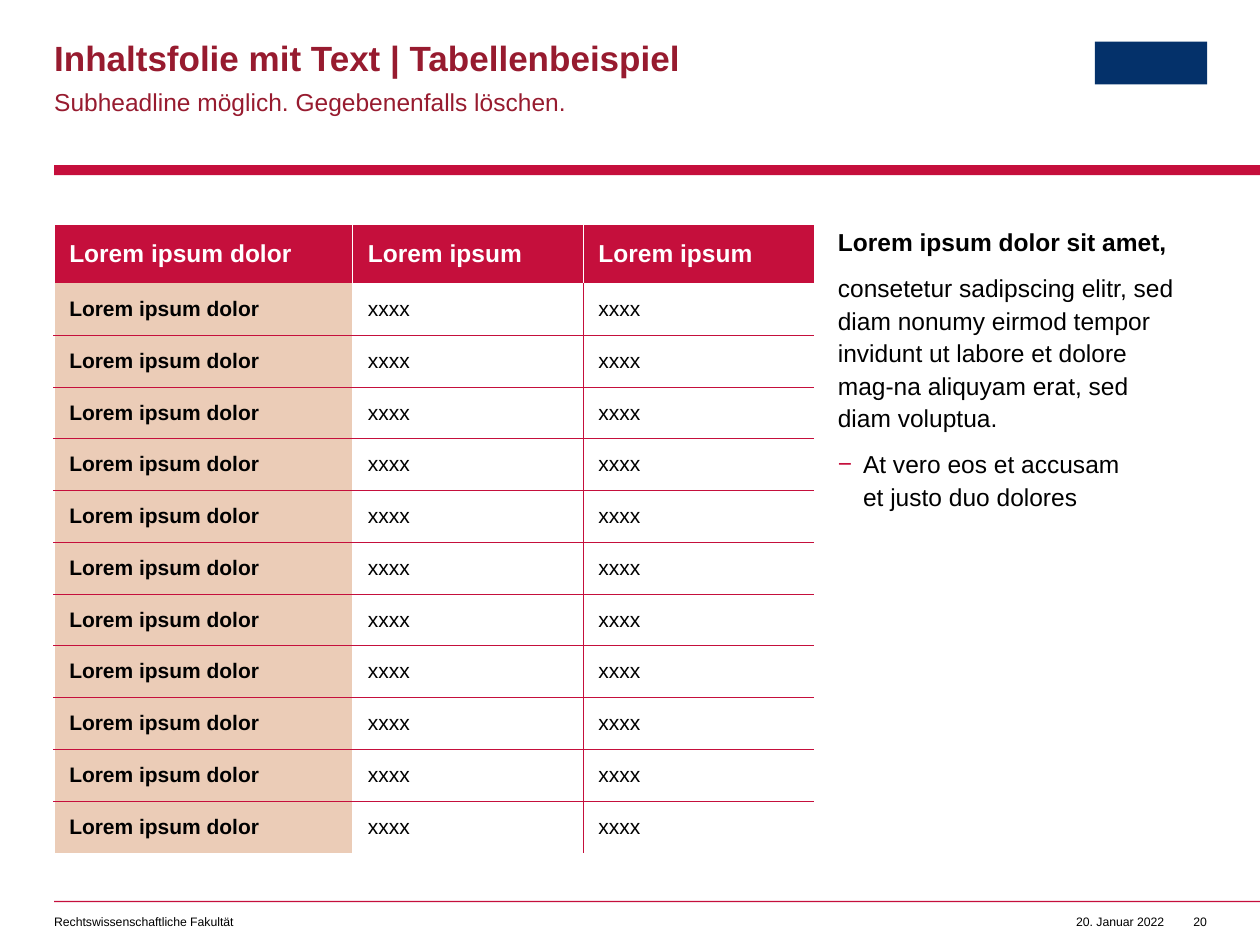
from lxml.etree import SubElement
from pptx import Presentation
from pptx.dml.color import RGBColor
from pptx.enum.shapes import MSO_SHAPE
from pptx.enum.text import MSO_ANCHOR, PP_ALIGN
from pptx.oxml.ns import qn
from pptx.util import Inches, Pt

COLORS = {
    "red": "C50F3C", "wine": "971B2F", "sand": "EBCCB7",
    "navy": "04316A", "white": "FFFFFF", "black": "000000",
}

presentation = Presentation()
presentation.slide_width, presentation.slide_height = Inches(10), Inches(7.5)
slide = presentation.slides.add_slide(presentation.slide_layouts[6])

# Grid of 100 columns by 75 rows; both steps are equal
UNIT = presentation.slide_width / 100
LEFT, RIGHT, TOP = 4.3, 95.8, 17.8


def grid(*steps):
    return [round(step * UNIT) for step in steps]


def write(paragraph, text, size, color="black", bold=False, **layout):
    paragraph.text = text
    for name, value in layout.items():
        setattr(paragraph, name, value)
    for run in paragraph.runs:
        for name, value in {"name": "Arial", "size": Pt(size), "bold": bold}.items():
            setattr(run.font, name, value)
        run.font.color.rgb = RGBColor.from_string(COLORS[color])


# Header bar, footer rule and a plain block in the logo's place
for left, top, width, height, color in [
    (LEFT, 13.1, 100 - LEFT, 0.8, "red"),
    (LEFT, 71.5, 100 - LEFT, 0.1, "red"),
    (86.9, 3.3, RIGHT - 86.9, 3.4, "navy"),
]:
    shape = slide.shapes.add_shape(MSO_SHAPE.RECTANGLE, *grid(left, top, width, height))
    shape.shadow.inherit = False
    shape.fill.solid()
    shape.fill.fore_color.rgb = RGBColor.from_string(COLORS[color])
    shape.line.fill.background()

# Text boxes: title, subheadline, footer and side text
body = {"line_spacing": 1.1, "space_after": Pt(8)}
right = {"alignment": PP_ALIGN.RIGHT}
text_boxes = [
    ((LEFT, 3.3, 56.1, 3), True, 0, [
        ("Inhaltsfolie mit Text | Tabellenbeispiel", 20, "wine", True, {"line_spacing": 0.9})]),
    ((LEFT, 6.7, 56.1, 2.4), True, 3.9, [
        ("Subheadline möglich. Gegebenenfalls löschen.", 14, "wine", False, body)]),
    ((LEFT, 72.6, 44.9, 1.2), True, 0, [
        ("Rechtswissenschaftliche Fakultät", 7, "black", False, {})]),
    ((85.3, 72.6, 7.1, 1.2), False, 0, [("20. Januar 2022", 7, "black", False, right)]),
    ((93.8, 72.6, 2, 1.2), False, 0, [("20", 7, "black", False, right)]),
    ((66.5, TOP, 29.3, 50), True, 2, [
        ("Lorem ipsum dolor sit amet,", 14, "black", True, body),
        ("consetetur sadipscing elitr, sed diam nonumy eirmod tempor invidunt ut labore "
         "et dolore mag-na aliquyam erat, sed diam voluptua.", 14, "black", False, body),
        ("At vero eos et accusam\vet justo duo dolores", 14, "black", False,
         {**body, "level": 1})]),
]
for place, wrap, inset, paragraphs in text_boxes:
    frame = slide.shapes.add_textbox(*grid(*place)).text_frame
    for name, value in {
        "margin_left": 0, "margin_top": 0, "margin_bottom": 0,
        "margin_right": grid(inset)[0], "word_wrap": wrap,
    }.items():
        setattr(frame, name, value)
    for index, (text, size, color, bold, layout) in enumerate(paragraphs):
        paragraph = frame.add_paragraph() if index else frame.paragraphs[0]
        write(paragraph, text, size, color, bold, **layout)

# Red dash in front of the last side paragraph
properties = paragraph._p.get_or_add_pPr()
indent = grid(2)[0]
properties.set("marL", str(indent))
properties.set("indent", str(-indent))
bullet_color = SubElement(properties, qn("a:buClr"))
SubElement(bullet_color, qn("a:srgbClr"), val=COLORS["red"])
SubElement(properties, qn("a:buFont"), typeface="Arial")
SubElement(properties, qn("a:buChar"), char="−")

# Table: header row, then eleven equal rows
rows = [["Lorem ipsum dolor", "Lorem ipsum", "Lorem ipsum"]]
rows += [["Lorem ipsum dolor", "xxxx", "xxxx"]] * 11
column_widths, header_height, table_height = (23.7, 18.3, 18.3), 4.7, 49.9
row_height = (table_height - header_height) / (len(rows) - 1)
table = slide.shapes.add_table(
    len(rows), len(column_widths), *grid(LEFT, TOP, sum(column_widths), table_height)).table
table.first_row = table.horz_banding = False
for column, width in zip(table.columns, column_widths):
    column.width = grid(width)[0]

thin, thick, hair = ("white", 0.5), ("white", 1), ("red", 0.25)
last_row, last_column = len(rows) - 1, len(column_widths) - 1
for row_index, texts in enumerate(rows):
    header = row_index == 0
    table.rows[row_index].height = grid(header_height if header else row_height)[0]
    # Vertical borders from the left edge to the right edge
    verticals = [thick, thin, thin, None] if header else [thick, thick, hair, None]
    for column_index, text in enumerate(texts):
        cell = table.cell(row_index, column_index)
        first = column_index == 0
        for name, value in {
            "vertical_anchor": MSO_ANCHOR.MIDDLE,
            "margin_left": Inches(0.12), "margin_right": Inches(0.12),
            "margin_top": Inches(0.04), "margin_bottom": Inches(0.04),
        }.items():
            setattr(cell, name, value)
        write(cell.text_frame.paragraphs[0], text, 14 if header else 12,
              "white" if header else "black", header or first)
        borders = {
            "L": verticals[column_index],
            "R": verticals[column_index + 1],
            "T": thick if header else hair if row_index > 1 else None,
            "B": hair if 0 < row_index < last_row else None,
        }
        cell_properties = cell._tc.get_or_add_tcPr()
        for side, border in borders.items():
            line = SubElement(cell_properties, qn(f"a:ln{side}"))
            if border:
                line.set("w", str(Pt(border[1])))
                fill = SubElement(line, qn("a:solidFill"))
                SubElement(fill, qn("a:srgbClr"), val=COLORS[border[0]])
            else:
                SubElement(line, qn("a:noFill"))
        if header or first:
            cell.fill.solid()
            cell.fill.fore_color.rgb = RGBColor.from_string(COLORS["red" if header else "sand"])
        else:
            cell.fill.background()

presentation.save("out.pptx")
